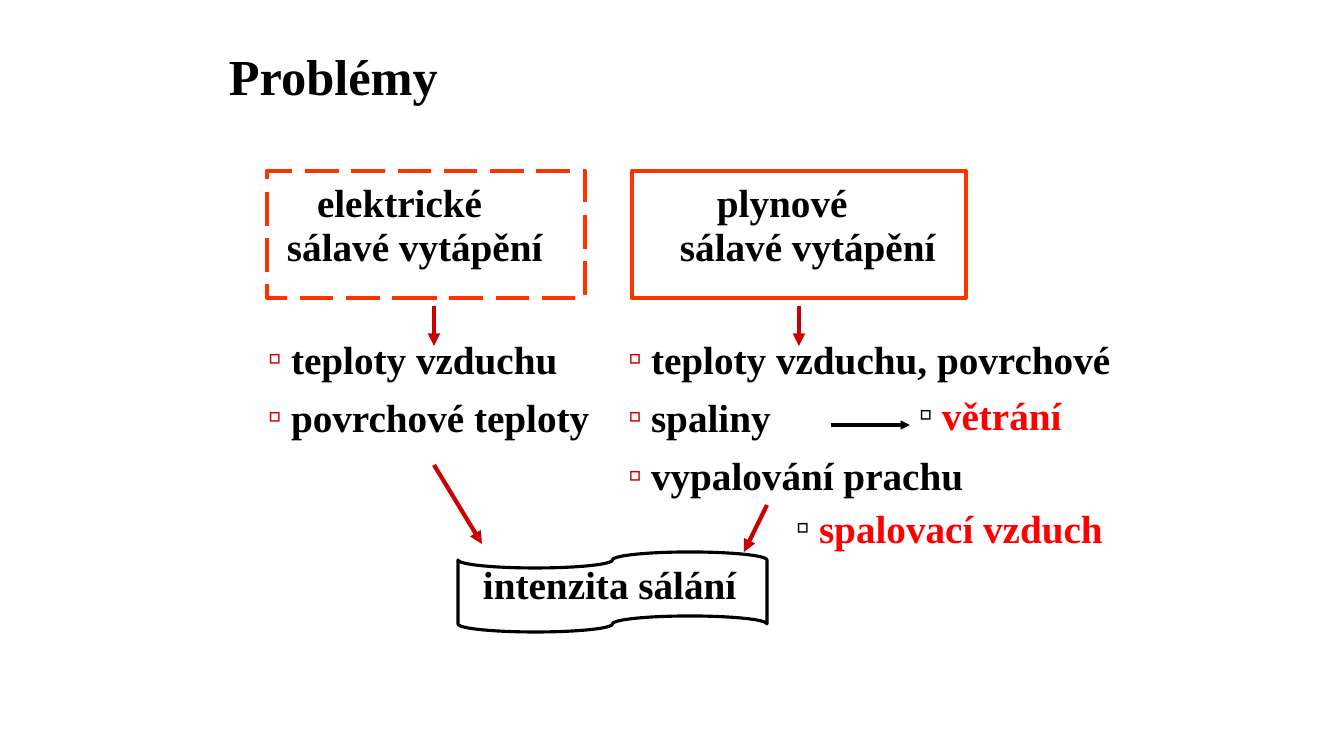
from pptx import Presentation
from pptx.dml.color import RGBColor as Rgb
from pptx.enum.dml import MSO_LINE as Dash
from pptx.enum.shapes import MSO_CONNECTOR as Link, MSO_SHAPE as Form
from pptx.oxml.ns import qn
from pptx.util import Pt
from lxml.etree import SubElement as Sub

PX = 12192000 / 1344
FONT = "Times New Roman"
INK = {"black": "000000", "dark": "CC0000", "red": "FF0000", "frame": "FF3300"}


def emu(*nums):
    return [round(n * PX) for n in nums]


def tint(ink):
    return Rgb.from_string(INK[ink])


def text(slide, box, lines, ink="black", size=28, mark=None, gap=0, lead=1.0):
    frame = slide.shapes.add_textbox(*emu(*box)).text_frame
    frame.word_wrap = True
    frame.margin_left = frame.margin_right = 0
    frame.margin_top = frame.margin_bottom = 0
    for i, (words, dent) in enumerate(lines):
        para = frame.paragraphs[0] if i == 0 else frame.add_paragraph()
        para.line_spacing = lead
        if i:
            para.space_before = Pt(gap)
        props = para._p.get_or_add_pPr()
        props.set("marL", str(emu(dent)[0]))
        if mark:
            props.set("indent", str(-emu(dent)[0]))
            Sub(Sub(props, qn("a:buClr")), qn("a:srgbClr")).set("val", INK[mark])
            Sub(props, qn("a:buFont")).set("typeface", FONT)
            Sub(props, qn("a:buChar")).set("char", "▫")
        run = para.add_run()
        run.text = words
        font = run.font
        font.name, font.size, font.bold = FONT, Pt(size), True
        font.color.rgb = tint(ink)


def items(slide, x, y, wide, words, ink="black", mark="dark"):
    box = (x, y, wide, 56 * len(words))
    text(slide, box, [(word, 23) for word in words], ink, mark=mark, gap=8)


def shape(slide, form, box, ink, width, dash=None):
    item = slide.shapes.add_shape(form, *emu(*box))
    item.shadow.inherit = False
    item.fill.background()
    item.line.color.rgb = tint(ink)
    item.line.width = Pt(width)
    if dash:
        item.line.dash_style = dash


def arrow(slide, ends, ink="dark", width=3):
    item = slide.shapes.add_connector(Link.STRAIGHT, *emu(*ends))
    item.line.color.rgb = tint(ink)
    item.line.width = Pt(width)
    Sub(item.line._get_or_add_ln(), qn("a:tailEnd")).set("type", "triangle")
    Sub(item._element.spPr, qn("a:effectLst"))


def branch(slide, box, name, dent, shift, dash=None):
    x, y, wide, high = box
    lines = [(name, dent), ("sálavé vytápění", 0)]
    text(slide, (x + shift, y + 12, wide - shift, 88), lines, lead=0.93)
    shape(slide, Form.RECTANGLE, box, "frame", 3, dash)
    mid = x + 167
    arrow(slide, (mid, y + high + 8, mid, y + high + 48))


def causes(slide, x, y):
    items(slide, x, y, 350, ["teploty vzduchu", "povrchové teploty"])
    items(slide, x + 360, y, 520,
          ["teploty vzduchu, povrchové", "spaliny", "vypalování prachu"])
    items(slide, x + 651, y + 56, 180, ["větrání"], "red", "black")
    items(slide, x + 528, y + 169, 340, ["spalovací vzduch"], "red", "black")
    arrow(slide, (x + 563, y + 90, x + 642, y + 90), "black", 2.25)


def result(slide, box):
    x, y, wide, high = box
    text(slide, (x + 25, y + 8, wide - 25, 45), [("intenzita sálání", 0)])
    shape(slide, Form.FLOWCHART_PUNCHED_TAPE, box, "black", 2.25)
    arrow(slide, (x + 309, y - 47, x + 286, y))
    arrow(slide, (x - 24, y - 87, x + 24, y - 8))


def main():
    deck = Presentation()
    deck.slide_width, deck.slide_height = emu(1344, 756)
    slide = deck.slides.add_slide(deck.slide_layouts[6])
    text(slide, (229, 45, 900, 58), [("Problémy", 0)], size=36)
    branch(slide, (267, 171, 318, 127), "elektrické", 30, 20, Dash.LONG_DASH)
    branch(slide, (632, 171, 334, 127), "plynové", 37, 48)
    causes(slide, 268, 335)
    result(slide, (458, 552, 309, 80))
    deck.save("out.pptx")


if __name__ == "__main__":
    main()
